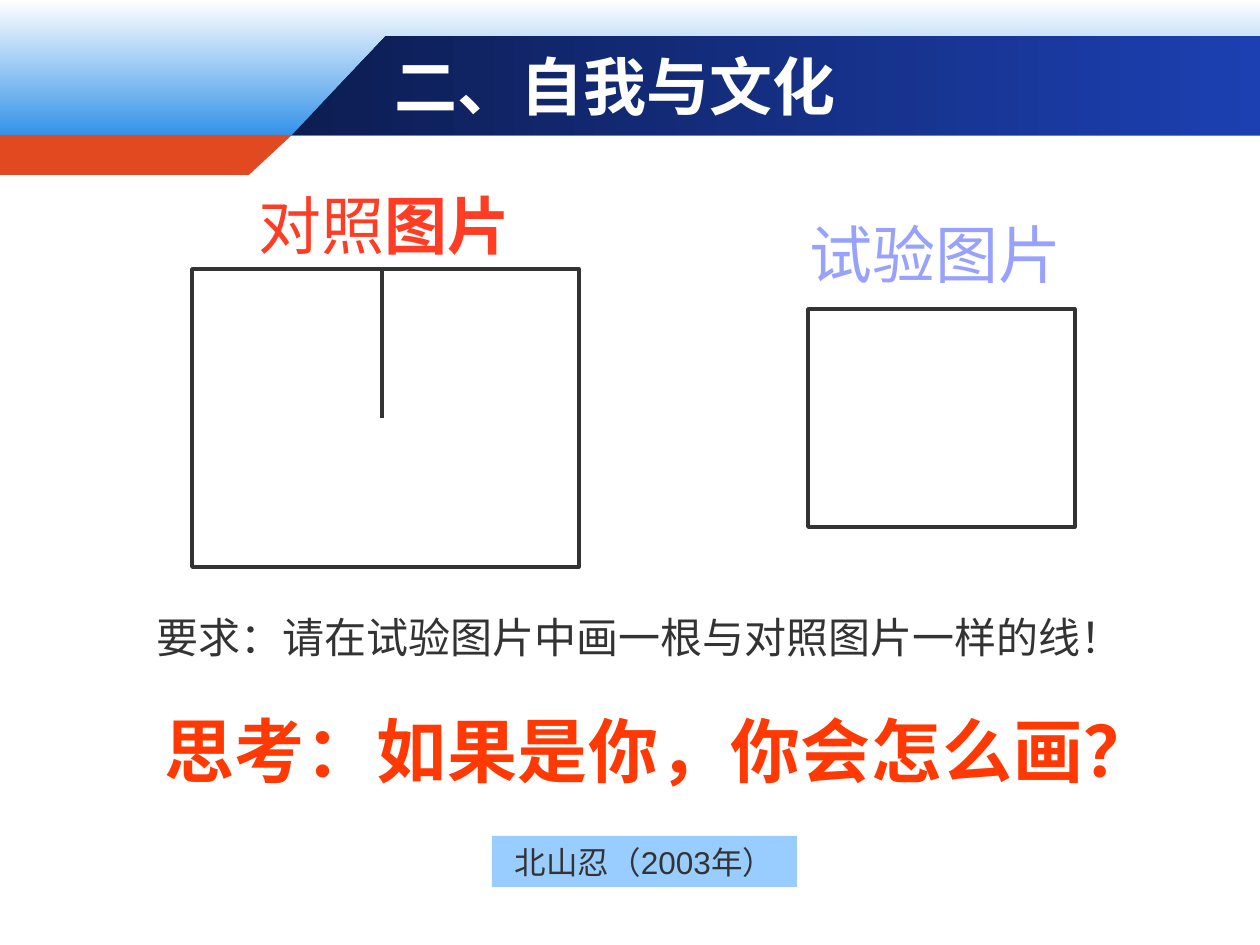
from dataclasses import dataclass

from lxml import etree
from pptx import Presentation
from pptx.dml.color import RGBColor
from pptx.enum.shapes import MSO_CONNECTOR, MSO_SHAPE
from pptx.enum.text import MSO_ANCHOR, PP_ALIGN
from pptx.oxml.ns import qn
from pptx.util import Pt

EMU_PER_PX = 914400 / 126
RECTANGLE = MSO_SHAPE.RECTANGLE
STRAIGHT = MSO_CONNECTOR.STRAIGHT
TOP, MIDDLE = MSO_ANCHOR.TOP, MSO_ANCHOR.MIDDLE
LEFT, CENTER = PP_ALIGN.LEFT, PP_ALIGN.CENTER


@dataclass(frozen=True)
class Theme:
    latin: str = "Arial"
    chinese: str = "Noto Sans CJK SC"
    white: str = "FFFFFF"
    ink: str = "333333"
    sky: str = "3392E9"
    navy: str = "0D1D52"
    blue: str = "1C40B2"
    orange: str = "E14A21"
    red: str = "FF3C24"
    lilac: str = "98A2FD"
    question: str = "FF3903"
    tag: str = "99CCFF"
    heading_size: int = 36
    question_size: int = 40
    task_size: int = 24
    tag_size: int = 18
    line_width: int = 2


THEME = Theme()


@dataclass(frozen=True)
class Area:
    left: int
    top: int
    width: int
    height: int

    def emu(self) -> list[int]:
        return [px(n) for n in (self.left, self.top, self.width, self.height)]


@dataclass(frozen=True)
class Span:
    text: str
    bold: bool = False


@dataclass(frozen=True)
class Label:
    area: Area
    spans: tuple[Span, ...]
    size: int
    color: str
    latin: str = THEME.latin
    align: PP_ALIGN = CENTER
    anchor: MSO_ANCHOR = TOP
    wrap: bool = False
    spacing: int = 0  # hundredths of a point
    fill: str = ""


@dataclass(frozen=True)
class Band:
    points: tuple[tuple[int, int], ...]
    colors: tuple[str, ...]
    angle: int = 0


BANDS = (
    Band(((0, 0), (1260, 0), (1260, 136), (0, 136)), (THEME.white, THEME.sky), 270),
    Band(((292, 135), (1260, 135), (1260, 36), (386, 36)), (THEME.navy, THEME.blue)),
    Band(((0, 135), (292, 135), (249, 175), (0, 175)), (THEME.orange,)),
)

FRAMES = (Area(192, 269, 387, 298), Area(808, 309, 267, 218))

LABELS = (
    Label(Area(382, 36, 840, 98), (Span("二、自我与文化", True),), THEME.heading_size,
          THEME.white, latin=THEME.chinese, align=LEFT, anchor=MIDDLE, wrap=True),
    Label(Area(492, 836, 305, 51), (Span("北山忍（2003年）"),), THEME.tag_size,
          THEME.ink, anchor=MIDDLE, fill=THEME.tag),
    Label(Area(244, 180, 281, 89), (Span("对照"), Span("图片", True)),
          THEME.heading_size, THEME.red),
    Label(Area(795, 209, 281, 89), (Span("试验图片"),), THEME.heading_size, THEME.lilac),
    Label(Area(144, 701, 1031, 97), (Span("思考：如果是你，你会怎么画？", True),),
          THEME.question_size, THEME.question, spacing=50),
    Label(Area(144, 605, 1002, 63), (Span("要求：请在试验图片中画一根与对照图片一样的线！"),),
          THEME.task_size, THEME.ink, align=LEFT, wrap=True),
)


def px(value: int) -> int:
    return round(value * EMU_PER_PX)


def rgb(color: str) -> RGBColor:
    return RGBColor.from_string(color)


def draw_band(slide, band: Band) -> None:
    builder = slide.shapes.build_freeform(*band.points[0], scale=EMU_PER_PX)
    builder.add_line_segments(band.points[1:], close=True)
    shape = builder.convert_to_shape()
    shape.shadow.inherit = False
    shape.line.fill.background()
    if len(band.colors) == 1:
        shape.fill.solid()
        shape.fill.fore_color.rgb = rgb(band.colors[0])
        return
    shape.fill.gradient()
    shape.fill.gradient_angle = band.angle
    for stop, color in zip(shape.fill.gradient_stops, band.colors):
        stop.color.rgb = rgb(color)


def style_line(line) -> None:
    line.color.rgb = rgb(THEME.ink)
    line.width = Pt(THEME.line_width)


def draw_frame(slide, area: Area) -> None:
    frame = slide.shapes.add_shape(RECTANGLE, *area.emu())
    frame.shadow.inherit = False
    frame.fill.background()
    style_line(frame.line)


def draw_half_line(slide, area: Area) -> None:
    """Drop a line from the middle of the top edge to the frame's centre."""
    middle = px(area.left + area.width // 2 - 3)
    line = slide.shapes.add_connector(
        STRAIGHT, middle, px(area.top), middle, px(area.top + area.height // 2))
    style_line(line.line)
    etree.SubElement(line.line._get_or_add_ln().getparent(), qn("a:effectLst"))


def draw_label(slide, label: Label) -> None:
    box = slide.shapes.add_textbox(*label.area.emu())
    if label.fill:
        box.fill.solid()
        box.fill.fore_color.rgb = rgb(label.fill)
    frame = box.text_frame
    frame.word_wrap = label.wrap
    frame.vertical_anchor = label.anchor
    para = frame.paragraphs[0]
    para.alignment = label.align
    for span in label.spans:
        run = para.add_run()
        run.text = span.text
        run.font.name = label.latin
        run.font.size = Pt(label.size)
        run.font.bold = span.bold
        run.font.color.rgb = rgb(label.color)
        properties = run.font._element
        east_asian = etree.Element(qn("a:ea"), typeface=THEME.chinese)
        properties.find(qn("a:latin")).addnext(east_asian)
        if label.spacing:
            properties.set("spc", str(label.spacing))


def main() -> None:
    deck = Presentation()
    deck.slide_width, deck.slide_height = px(1260), px(945)
    slide = deck.slides.add_slide(deck.slide_layouts[6])

    # Header bands
    for band in BANDS:
        draw_band(slide, band)

    # Control and test frames
    for area in FRAMES:
        draw_frame(slide, area)
    draw_half_line(slide, FRAMES[0])

    # Title, captions and questions
    for label in LABELS:
        draw_label(slide, label)

    deck.save("out.pptx")


if __name__ == "__main__":
    main()
